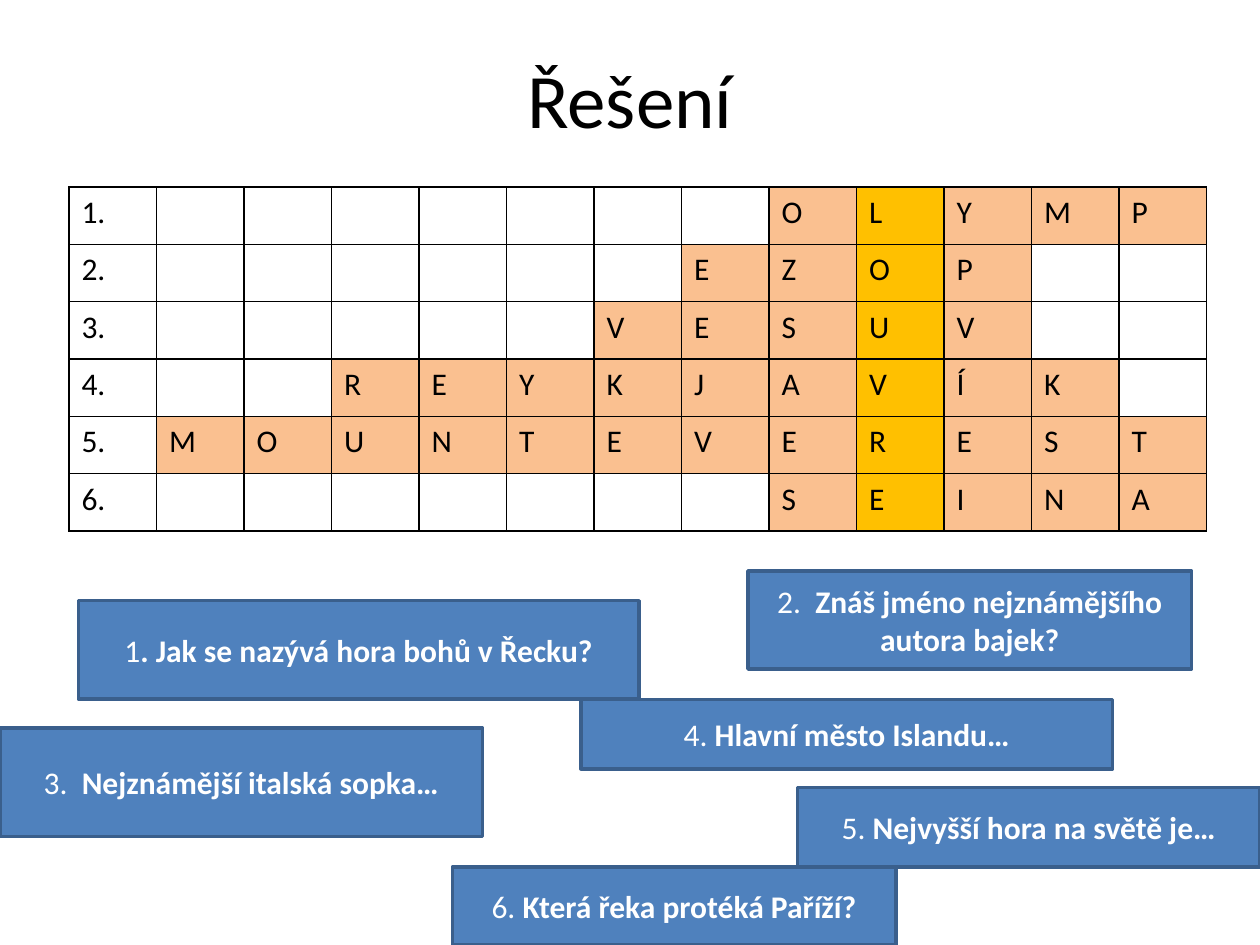
import pptx
import pptx.util
import pptx.dml.color
import pptx.enum.shapes
import pptx.enum.text
import pptx.oxml
from pptx.oxml.ns import nsdecls

Cm, Pt = pptx.util.Cm, pptx.util.Pt
RGBColor = pptx.dml.color.RGBColor
BLACK = RGBColor(0x00, 0x00, 0x00)
WHITE = RGBColor(0xFF, 0xFF, 0xFF)
PEACH = RGBColor(0xFA, 0xC0, 0x90)
GOLD = RGBColor(0xFF, 0xC0, 0x00)
BLUE = RGBColor(0x4F, 0x81, 0xBD)
NAVY = RGBColor(0x3A, 0x5F, 0x8C)

TITLE = "Řešení"
WORDS = [("OLYMP", 8), ("EZOP", 7), ("VESUV", 6),
         ("REYKJAVÍK", 3), ("MOUNTEVEREST", 1), ("SEINA", 8)]
COLS, KEY = 13, 9
GRID = (1.39, 3.77, 22.94, 6.94)
HINTS = [
    ("1", ". Jak se nazývá hora bohů v Řecku?", (1.58, 12.11, 11.3, 1.98)),
    ("2.  ", "Znáš jméno nejznámějšího autora bajek?", (15.08, 11.51, 8.94, 1.98)),
    ("3.  ", "Nejznámější italská sopka…", (0, 14.68, 9.73, 2.18)),
    ("4. ", "Hlavní město Islandu…", (11.71, 14.1, 10.72, 1.4)),
    ("5. ", "Nejvyšší hora na světě je…", (16.08, 15.88, 9.32, 1.6)),
    ("6. ", "Která řeka protéká Paříží?", (9.12, 17.48, 8.94, 1.57)),
]

HEAD = {"name": "Calibri", "size": Pt(44)}
BODY = {"name": "Calibri", "size": Pt(18), "bold": False}
BOLD = {**BODY, "bold": True}
FRAME = {"word_wrap": True,
         "vertical_anchor": pptx.enum.text.MSO_ANCHOR.MIDDLE}


def style(item, form):
    for key, value in form.items():
        setattr(item, key, value)


def write(para, text, form, color):
    run = para.add_run()
    run.text = text
    style(run.font, form)
    run.font.color.rgb = color


def center(shape):
    style(shape.text_frame, FRAME)
    para = shape.text_frame.paragraphs[0]
    para.alignment = pptx.enum.text.PP_ALIGN.CENTER
    return para


def border(cell):
    props = cell._tc.get_or_add_tcPr()
    for side in "LRTB":
        props.append(pptx.oxml.parse_xml(
            f'<a:ln{side} {nsdecls("a")} w="12700"><a:solidFill>'
            f'<a:srgbClr val="{BLACK}"/></a:solidFill></a:ln{side}>'))


def paint(item, color):
    item.fill.solid()
    item.fill.fore_color.rgb = color


def puzzle(slide):
    table = slide.shapes.add_table(len(WORDS), COLS, *map(Cm, GRID)).table
    for col in table.columns:
        col.width = Cm(GRID[2] / COLS)
    for r, (word, start) in enumerate(WORDS):
        table.rows[r].height = Cm(GRID[3] / len(WORDS))
        for c in range(COLS):
            cell = table.cell(r, c)
            border(cell)
            cell.fill.background()
            para = cell.text_frame.paragraphs[0]
            if c == 0:
                write(para, f"{r + 1}.", BODY, BLACK)
            elif start <= c < start + len(word):
                paint(cell, GOLD if c == KEY else PEACH)
                write(para, word[c - start], BODY, BLACK)


def hint(slide, label, text, place):
    kind = pptx.enum.shapes.MSO_SHAPE.RECTANGLE
    box = slide.shapes.add_shape(kind, *map(Cm, place))
    box.shadow.inherit = False
    paint(box, BLUE)
    box.line.color.rgb = NAVY
    box.line.width = Pt(2)
    para = center(box)
    write(para, label, BODY, WHITE)
    write(para, text, BOLD, WHITE)


def main():
    deck = pptx.Presentation()
    style(deck, {"slide_width": Cm(25.4), "slide_height": Cm(19.05)})
    slide = deck.slides.add_slide(deck.slide_layouts[6])
    title = slide.shapes.add_textbox(Cm(1.27), Cm(0.76), Cm(22.86), Cm(2.41))
    write(center(title), TITLE, HEAD, BLACK)
    puzzle(slide)
    for item in HINTS:
        hint(slide, *item)
    deck.save("out.pptx")


if __name__ == "__main__":
    main()
